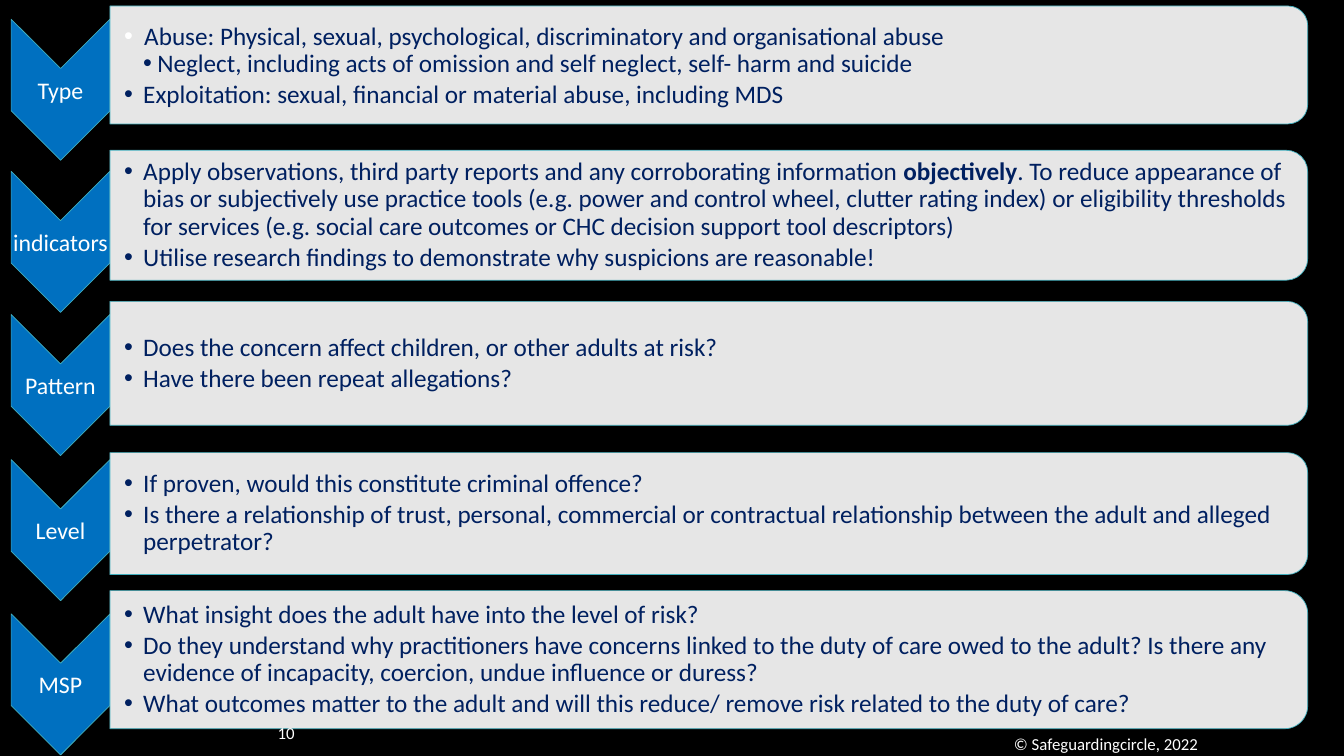
from dataclasses import dataclass

from lxml.etree import SubElement
from pptx import Presentation
from pptx.dml.color import RGBColor as Rgb
from pptx.enum.shapes import MSO_SHAPE as Shape
from pptx.enum.text import MSO_ANCHOR as Anchor, PP_ALIGN as Align
from pptx.oxml.ns import qn
from pptx.util import Inches, Pt

# Content: label, chevron top, panel top, panel height, points
# A point is a list of text parts; every second part is bold.
ROWS = [
    ("Type", 0.19, 0.06, 1.17, [
        ["Abuse: Physical, sexual, psychological, discriminatory and organisational abuse"],
        ["Neglect, including acts of omission and self neglect, self- harm and suicide"],
        ["Exploitation: sexual, financial or material abuse, including MDS"],
    ]),
    ("indicators", 1.7, 1.49, 1.29, [
        ["Apply observations, third party reports and any corroborating information ",
         "objectively",
         ". To reduce appearance of bias or subjectively use practice tools (e.g. power and "
         "control wheel, clutter rating index) or eligibility thresholds for services (e.g. "
         "social care outcomes or CHC decision support tool descriptors)"],
        ["Utilise research findings to demonstrate why suspicions are reasonable!"],
    ]),
    ("Pattern", 3.12, 2.99, 1.23, [
        ["Does the concern affect children, or other adults at risk?"],
        ["Have there been repeat allegations?"],
    ]),
    ("Level", 4.56, 4.49, 1.21, [
        ["If proven, would this constitute criminal offence?"],
        ["Is there a relationship of trust, personal, commercial or contractual relationship "
         "between the adult and alleged perpetrator?"],
    ]),
    ("MSP", 6.09, 5.86, 1.37, [
        ["What insight does the adult have into the level of risk?"],
        ["Do they understand why practitioners have concerns linked to the duty of care owed to "
         "the adult? Is there any evidence of incapacity, coercion, undue influence or duress?"],
        ["What outcomes matter to the adult and will this reduce/ remove risk related to the "
         "duty of care?"],
    ]),
]
FOOTERS = [
    ("10", (0.02, 7.07, 3, 0.4), Align.RIGHT),
    ("© Safeguardingcircle, 2022", (8.72, 7.18, 4.5, 0.4), Align.CENTER),
]


@dataclass(frozen=True)
class Theme:
    font: str = "Calibri"
    black: str = "000000"
    white: str = "FFFFFF"
    navy: str = "002060"
    blue: str = "0070C0"
    teal: str = "41AEBD"
    label: int = 17
    body: int = 18
    footer: int = 12


THEME = Theme()

# Layout in inches
CHEVRON_LEFT, CHEVRON_WIDTH, CHEVRON_HEIGHT = 0.11, 0.98, 1.4
LABEL_HEIGHT = CHEVRON_HEIGHT - 2 * CHEVRON_WIDTH / 2
PANEL_LEFT, PANEL_WIDTH = CHEVRON_LEFT + CHEVRON_WIDTH, 11.88
PANEL_PAD = 0.06
HANG = 0.19
# Margin and bullet hang of the points that differ from the rest
FIRST_POINT, NESTED_POINT = (0.2, 0.2), (0.33, 0.14)


def add_turned(page, kind, left, top, width, height, color):
    """Add a shape turned a quarter clockwise that covers the given area."""
    shape = page.shapes.add_shape(
        kind, Inches(left + (width - height) / 2), Inches(top + (height - width) / 2),
        Inches(height), Inches(width))
    shape.rotation = 90
    shape.shadow.inherit = False
    shape.fill.solid()
    shape.fill.fore_color.rgb = Rgb.from_string(color)
    shape.line.color.rgb = Rgb.from_string(THEME.teal)
    shape.line.width = Pt(0.5)
    return shape


def add_frame(page, area, inset=None):
    frame = page.shapes.add_textbox(*map(Inches, area)).text_frame
    frame.word_wrap = True
    frame.vertical_anchor = Anchor.MIDDLE
    if inset is not None:
        frame.margin_left = Inches(inset)
        frame.margin_top = frame.margin_right = frame.margin_bottom = Inches(0.01)
    return frame


def set_font(para, size, color):
    para.font.name = THEME.font
    para.font.size = Pt(size)
    para.font.color.rgb = Rgb.from_string(color)


def add_line(frame, text, size, align):
    para = frame.paragraphs[0]
    para.text = text
    para.alignment = align
    set_font(para, size, THEME.white)


def set_bullet(para, margin, hang, color):
    props = para._p.get_or_add_pPr()
    props.set("marL", str(Inches(margin)))
    props.set("indent", str(-Inches(hang)))
    SubElement(SubElement(props, qn("a:buClr")), qn("a:srgbClr"), val=color)
    SubElement(props, qn("a:buFont"), typeface="Arial")
    SubElement(props, qn("a:buChar"), char="•")


def add_points(frame, points, is_first_row):
    for index, parts in enumerate(points):
        para = frame.paragraphs[0] if index == 0 else frame.add_paragraph()
        leading = is_first_row and index == 0
        nested = is_first_row and index == 1
        margin, hang = FIRST_POINT if leading else NESTED_POINT if nested else (HANG, HANG)
        set_bullet(para, margin, hang, THEME.white if leading else THEME.navy)
        para.line_spacing = 1.0 if leading else 0.9
        para.space_after = Pt(0 if leading else 0.15 * THEME.body)
        set_font(para, THEME.body, THEME.navy)
        for number, part in enumerate(parts):
            span = para.add_run()
            span.text = part
            if number % 2:
                span.font.bold = True


def main():
    deck = Presentation()
    deck.slide_width, deck.slide_height = Inches(13.33), Inches(7.5)
    page = deck.slides.add_slide(deck.slide_layouts[6])
    page.background.fill.solid()
    page.background.fill.fore_color.rgb = Rgb.from_string(THEME.black)

    # Rows: chevron with label, panel with points
    for row, (label, chevron_top, panel_top, panel_height, points) in enumerate(ROWS):
        add_turned(page, Shape.CHEVRON, CHEVRON_LEFT, chevron_top,
                   CHEVRON_WIDTH, CHEVRON_HEIGHT, THEME.blue)
        label_area = (CHEVRON_LEFT, chevron_top + CHEVRON_WIDTH / 2, CHEVRON_WIDTH, LABEL_HEIGHT)
        add_line(add_frame(page, label_area, 0.01), label, THEME.label, Align.CENTER)

        panel = add_turned(page, Shape.ROUND_2_SAME_RECTANGLE, PANEL_LEFT, panel_top,
                           PANEL_WIDTH, panel_height, THEME.white)
        tint = panel._element.spPr.find(qn("a:solidFill")).find(qn("a:srgbClr"))
        SubElement(tint, qn("a:alpha"), val="90000")
        text_area = (PANEL_LEFT, panel_top + PANEL_PAD,
                     PANEL_WIDTH - PANEL_PAD, panel_height - 2 * PANEL_PAD)
        add_points(add_frame(page, text_area, 0.14), points, row == 0)

    # Page number and copyright line
    for text, area, align in FOOTERS:
        add_line(add_frame(page, area), text, THEME.footer, align)

    deck.save("out.pptx")


if __name__ == "__main__":
    main()
